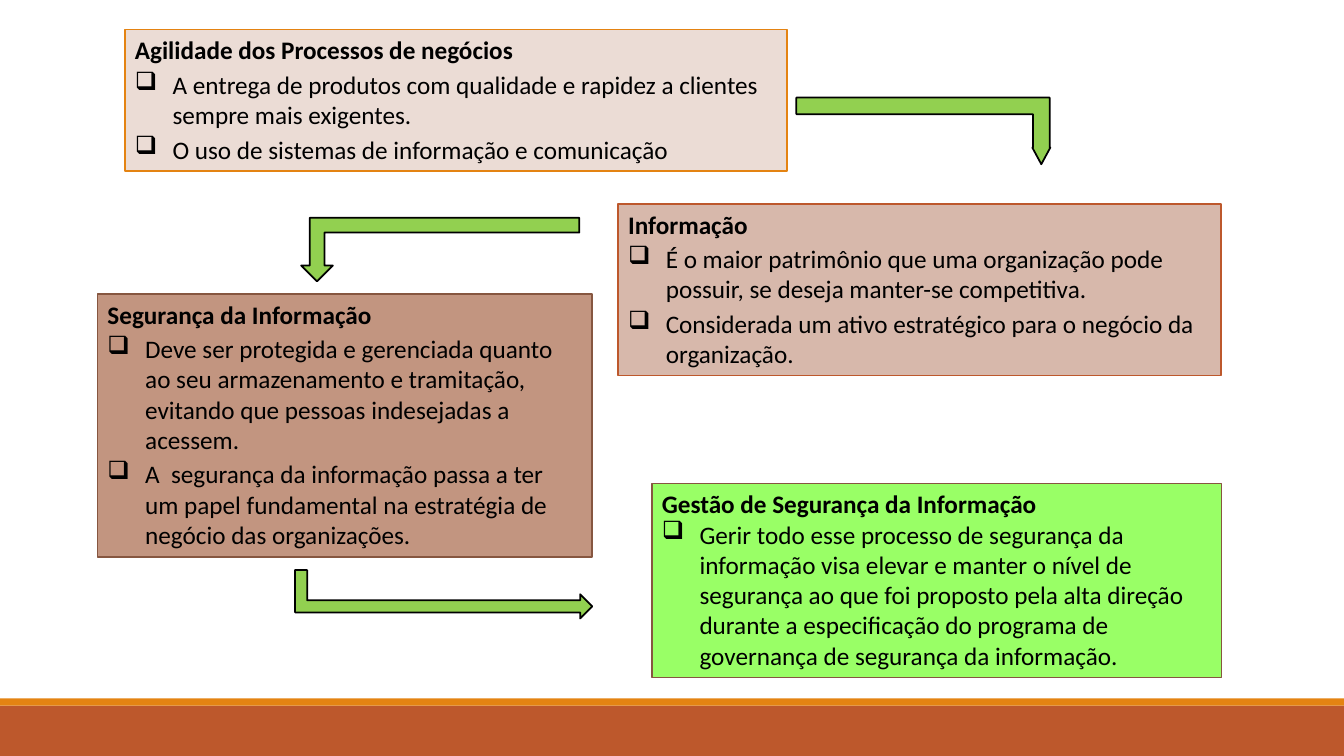
import pptx
import pptx.dml.color
import pptx.enum.shapes
import pptx.enum.text
import pptx.oxml.ns
import pptx.util
from lxml import etree

Cm = pptx.util.Cm
Pt = pptx.util.Pt
qn = pptx.oxml.ns.qn
SHAPES = pptx.enum.shapes.MSO_SHAPE


def color(value):
    return pptx.dml.color.RGBColor.from_string(value)


def add_filled_shape(kind, position, fill, line=None, line_width=1):
    """Add a shape at (left, top, width, height) in cm; without a line colour it has no outline."""
    shape = slide.shapes.add_shape(kind, *[Cm(length) for length in position])
    shape.shadow.inherit = False
    shape.fill.solid()
    shape.fill.fore_color.rgb = color(fill)
    if line:
        shape.line.color.rgb = color(line)
        shape.line.width = Pt(line_width)
    else:
        shape.line.fill.background()
    return shape


presentation = pptx.Presentation()
presentation.slide_width = Cm(33.87)
presentation.slide_height = Cm(19.05)
slide = presentation.slides.add_slide(presentation.slide_layouts[6])

# Footer bands
add_filled_shape(SHAPES.RECTANGLE, (0, 17.78, 33.87, 1.27), "BD582C")
add_filled_shape(SHAPES.RECTANGLE, (0, 17.6, 33.87, 0.18), "E48312")

# Text boxes: position, fill, line, space before bullets, heading, bullets
boxes = [
    ((16.43, 12.19, 14.35, 4.88), "99FF66", "865640", 0,
     "Gestão de Segurança da Informação",
     ["Gerir todo esse processo de segurança da informação visa elevar e manter o nível de "
      "segurança ao que foi proposto pela alta direção durante a especificação do programa de "
      "governança de segurança da informação."]),
    ((3.15, 0.75, 16.69, 3.56), "EBDCD5", "E48312", 3,
     "Agilidade dos Processos de negócios",
     ["A entrega de produtos com qualidade e rapidez a clientes sempre mais exigentes.",
      "O uso de sistemas de informação e comunicação"]),
    ((15.58, 5.14, 15.19, 4.32), "D7B8AB", "BD582C", 3,
     "Informação",
     ["É o maior patrimônio que uma organização pode possuir, se deseja manter-se competitiva.",
      "Considerada um ativo estratégico para o negócio da organização."]),
    ((2.46, 7.41, 12.46, 6.63), "C29580", "865640", 3,
     "Segurança da Informação",
     ["Deve ser protegida e gerenciada quanto ao seu armazenamento e tramitação, evitando que "
      "pessoas indesejadas a acessem.",
      "A  segurança da informação passa a ter um papel fundamental na estratégia de negócio "
      "das organizações."]),
]
for position, fill, line, space_before, heading, bullets in boxes:
    box = add_filled_shape(SHAPES.RECTANGLE, position, fill, line)
    text_frame = box.text_frame
    text_frame.word_wrap = True
    text_frame.auto_size = pptx.enum.text.MSO_AUTO_SIZE.SHAPE_TO_FIT_TEXT
    text_frame.vertical_anchor = pptx.enum.text.MSO_ANCHOR.TOP
    text_frame.text = "\n".join([heading] + bullets)
    for index, paragraph in enumerate(text_frame.paragraphs):
        paragraph.alignment = pptx.enum.text.PP_ALIGN.LEFT
        if index > 0:
            properties = paragraph._p.get_or_add_pPr()
            properties.set("marL", str(Cm(0.95)))
            properties.set("indent", str(-Cm(0.95)))
            etree.SubElement(properties, qn("a:buChar")).set("char", "❑")
            paragraph.space_before = Pt(space_before)
        paragraph.font.name = "Calibri"
        paragraph.font.size = Pt(18)
        paragraph.font.bold = index == 0
        paragraph.font.color.rgb = color("000000")

# Bent arrows: position, rotation, flipped vertically, adjustments
arrows = [
    ((20.07, 2.46, 6.4, 1.68), 0, True, (0.25, 0.135, 0.25)),
    ((7.59, 5.49, 7.01, 1.6), 180, False, (0.231, 0.25, 0.25)),
    ((10.57, 11.23, 1.22, 7.49), 90, False, (0.25, 0.25, 0.25)),
]
for position, rotation, flipped, adjustments in arrows:
    arrow = add_filled_shape(SHAPES.BENT_UP_ARROW, position, "92D050", "000000", 1.25)
    arrow.rotation = rotation
    for index, adjustment in enumerate(adjustments):
        arrow.adjustments[index] = adjustment
    if flipped:
        arrow._element.spPr.find(qn("a:xfrm")).set("flipV", "1")

presentation.save("out.pptx")
